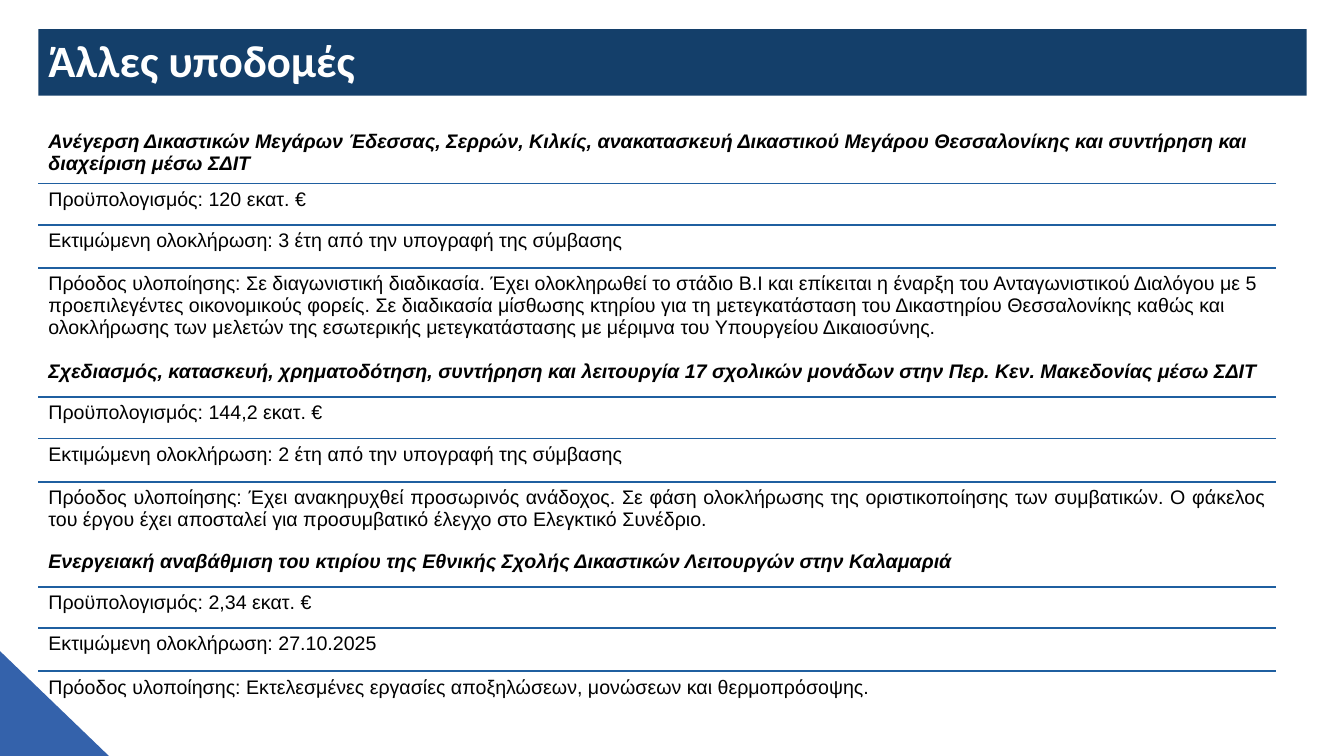
from lxml.etree import SubElement
from pptx import Presentation
from pptx.dml.color import RGBColor
from pptx.enum.shapes import MSO_SHAPE
from pptx.enum.text import MSO_ANCHOR, PP_ALIGN
from pptx.oxml.ns import qn
from pptx.util import Inches, Pt

TITLE = "Άλλες υποδομές"
NAVY, BLUE, RULE, BLACK, WHITE = "143F6A", "3462AB", "1F5FA0", "000000", "FFFFFF"
LEFT, TABLE_WIDTH = 0.38, 12.28
LABELS = ("Προϋπολογισμός", "Εκτιμώμενη ολοκλήρωση", "Πρόοδος υλοποίησης")

PROJECTS = [
    {
        "name": "Ανέγερση Δικαστικών Μεγάρων Έδεσσας, Σερρών, Κιλκίς, ανακατασκευή "
                "Δικαστικού Μεγάρου Θεσσαλονίκης και συντήρηση και διαχείριση μέσω ΣΔΙΤ",
        "details": (
            "120 εκατ. €",
            "3 έτη από την υπογραφή της σύμβασης",
            "Σε διαγωνιστική διαδικασία. Έχει ολοκληρωθεί το στάδιο Β.Ι και επίκειται "
            "η έναρξη του Ανταγωνιστικού Διαλόγου με 5 προεπιλεγέντες οικονομικούς "
            "φορείς. Σε διαδικασία μίσθωσης κτηρίου για τη μετεγκατάσταση του "
            "Δικαστηρίου Θεσσαλονίκης καθώς και ολοκλήρωσης των μελετών της εσωτερικής "
            "μετεγκατάστασης με μέριμνα του Υπουργείου Δικαιοσύνης.",
        ),
        "top": 1.25, "heights": (0.57, 0.41, 0.43, 0.8), "progress_align": PP_ALIGN.LEFT,
    },
    {
        "name": "Σχεδιασμός, κατασκευή, χρηματοδότηση, συντήρηση και λειτουργία "
                "17 σχολικών μονάδων στην Περ. Κεν. Μακεδονίας μέσω ΣΔΙΤ",
        "details": (
            "144,2 εκατ. €",
            "2 έτη από την υπογραφή της σύμβασης",
            "Έχει ανακηρυχθεί προσωρινός ανάδοχος. Σε φάση ολοκλήρωσης της "
            "οριστικοποίησης των συμβατικών. Ο φάκελος του έργου έχει αποσταλεί για "
            "προσυμβατικό έλεγχο στο Ελεγκτικό Συνέδριο.",
        ),
        "top": 3.53, "heights": (0.41, 0.41, 0.43, 0.57), "progress_align": PP_ALIGN.JUSTIFY,
    },
    {
        "name": "Ενεργειακή αναβάθμιση του κτιρίου της Εθνικής Σχολής Δικαστικών "
                "Λειτουργών στην Καλαμαριά",
        "details": (
            "2,34 εκατ. €",
            "27.10.2025",
            "Εκτελεσμένες εργασίες αποξηλώσεων, μονώσεων και θερμοπρόσοψης.",
        ),
        "top": 5.41, "heights": (0.41, 0.41, 0.43, 0.41), "progress_align": PP_ALIGN.JUSTIFY,
    },
]


def rgb(color):
    return RGBColor.from_string(color)


def paint(shape, color):
    shape.fill.solid()
    shape.fill.fore_color.rgb = rgb(color)
    shape.line.fill.background()


def set_font(paragraph, name, size, color, bold=False, italic=False):
    font = paragraph.font
    font.name, font.size, font.bold, font.italic = name, Pt(size), bold, italic
    font.color.rgb = rgb(color)


def set_borders(cell, ruled_sides):
    """Rule the given sides (T, B) of a cell and clear the others."""
    properties = cell._tc.get_or_add_tcPr()
    for position, side in enumerate("LRTB"):
        border = SubElement(properties, qn(f"a:ln{side}"), w=str(Pt(1.5)))
        if side in ruled_sides:
            fill = SubElement(border, qn("a:solidFill"))
            SubElement(fill, qn("a:srgbClr"), val=RULE)
        else:
            SubElement(border, qn("a:noFill"))
        properties.insert(position, border)


def add_project(slide, project):
    name, heights = project["name"], project["heights"]
    rows = [name] + [f"{label}: {detail}" for label, detail in zip(LABELS, project["details"])]
    last = len(rows) - 1
    table = slide.shapes.add_table(
        len(rows), 1, Inches(LEFT), Inches(project["top"]),
        Inches(TABLE_WIDTH), Inches(sum(heights))).table
    table.first_row = table.horz_banding = False
    for index, (text, height) in enumerate(zip(rows, heights)):
        table.rows[index].height = Inches(height)
        cell = table.cell(index, 0)
        cell.text = text
        cell.fill.background()
        set_borders(cell, ("T" if index > 0 else "") + ("B" if index < last else ""))
        paragraph = cell.text_frame.paragraphs[0]
        paragraph.alignment = project["progress_align"] if index == last else PP_ALIGN.LEFT
        set_font(paragraph, "Arial", 14, BLACK, bold=index == 0, italic=index == 0)


def main():
    presentation = Presentation()
    presentation.slide_width, presentation.slide_height = Inches(13.33), Inches(7.5)
    slide = presentation.slides.add_slide(presentation.slide_layouts[5])

    corner = slide.shapes.add_shape(
        MSO_SHAPE.RIGHT_TRIANGLE, Inches(0), Inches(6.46), Inches(1.08), Inches(1.04))
    corner.shadow.inherit = False
    paint(corner, BLUE)

    title = slide.shapes.title
    title.left, title.top = Inches(LEFT), Inches(0.29)
    title.width, title.height = Inches(12.58), Inches(0.66)
    paint(title, NAVY)
    title.text_frame.text = TITLE
    title.text_frame.vertical_anchor = MSO_ANCHOR.MIDDLE
    heading = title.text_frame.paragraphs[0]
    heading.alignment = PP_ALIGN.LEFT
    heading.line_spacing = 0.9
    set_font(heading, "Calibri", 32, WHITE, bold=True)

    for project in PROJECTS:
        add_project(slide, project)

    presentation.save("out.pptx")


if __name__ == "__main__":
    main()
